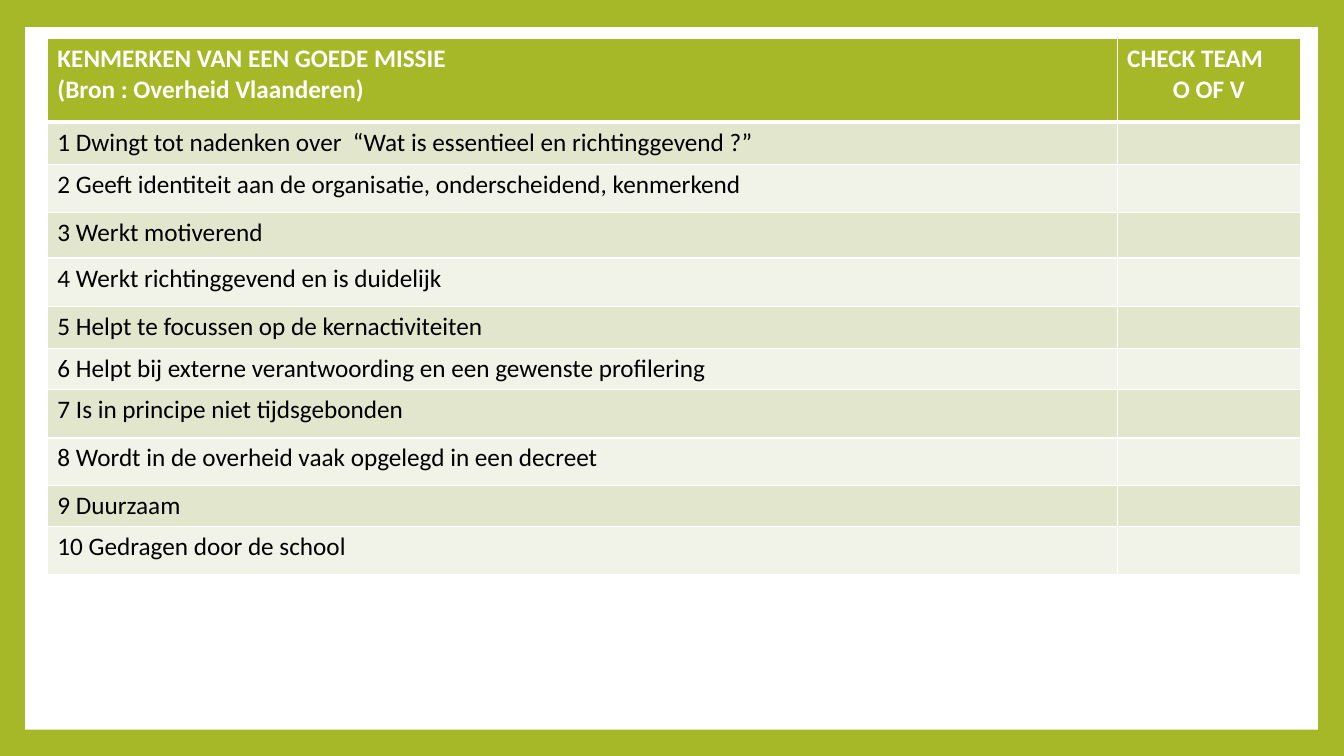
from lxml.etree import SubElement
from pptx import Presentation
from pptx.dml.color import RGBColor
from pptx.enum.shapes import MSO_SHAPE
from pptx.enum.text import PP_ALIGN
from pptx.oxml.ns import qn
from pptx.util import Inches, Pt

GREEN, WHITE, BLACK = "A6B727", "FFFFFF", "000000"
BANDS = ("E1E6CD", "F1F3E8")
WIDTHS = (10.61, 1.82)
HEIGHTS = (0.83, 0.42, 0.48, 0.45, 0.48, 0.42, 0.39, 0.48, 0.47, 0.36, 0.48)
TRAITS = (
    "Dwingt tot nadenken over  “Wat is essentieel en richtinggevend ?”",
    "Geeft identiteit aan de organisatie, onderscheidend, kenmerkend",
    "Werkt motiverend",
    "Werkt richtinggevend en is duidelijk",
    "Helpt te focussen op de kernactiviteiten",
    "Helpt bij externe verantwoording en een gewenste profilering",
    "Is in principe niet tijdsgebonden",
    "Wordt in de overheid vaak opgelegd in een decreet",
    "Duurzaam",
    "Gedragen door de school",
)


def paint(fill, color):
    fill.solid()
    fill.fore_color.rgb = RGBColor.from_string(color)


def add_panel(slide):
    """Leave the green background visible as a frame around a white panel."""
    paint(slide.background.fill, GREEN)
    panel = slide.shapes.add_shape(
        MSO_SHAPE.RECTANGLE, Inches(0.25), Inches(0.27), Inches(12.82), Inches(6.97))
    panel.shadow.inherit = False
    paint(panel.fill, WHITE)
    panel.line.fill.background()


def add_edges(cell, top, bottom):
    props = cell._tc.get_or_add_tcPr()
    for side, width in (("L", 1), ("R", 1), ("T", top), ("B", bottom)):
        line = SubElement(props, qn("a:ln" + side), w=str(Pt(width)))
        fill = SubElement(line, qn("a:solidFill"))
        SubElement(fill, qn("a:srgbClr"), val=WHITE)


def add_text(par, text, color, bold):
    run = par.add_run()
    run.text = text
    font = run.font
    font.name, font.size, font.bold = "Calibri", Pt(18), bold
    font.color.rgb = RGBColor.from_string(color)


def fill_head(cell, first, second, align=None):
    add_edges(cell, 1, 3)
    paint(cell.fill, GREEN)
    frame = cell.text_frame
    add_text(frame.paragraphs[0], first, WHITE, True)
    par = frame.add_paragraph()
    par.alignment = align
    add_text(par, second, WHITE, True)


def add_checklist(slide):
    table = slide.shapes.add_table(
        len(HEIGHTS), len(WIDTHS), Inches(0.47), Inches(0.38),
        Inches(sum(WIDTHS)), Inches(sum(HEIGHTS))).table
    for col, width in zip(table.columns, WIDTHS):
        col.width = Inches(width)
    for row, height in zip(table.rows, HEIGHTS):
        row.height = Inches(height)
    fill_head(table.cell(0, 0), "KENMERKEN VAN EEN GOEDE MISSIE",
              "(Bron : Overheid Vlaanderen)")
    fill_head(table.cell(0, 1), "CHECK TEAM", "O OF V", PP_ALIGN.CENTER)
    for num, trait in enumerate(TRAITS, 1):
        for col in range(len(WIDTHS)):
            cell = table.cell(num, col)
            add_edges(cell, 3 if num == 1 else 1, 1)
            paint(cell.fill, BANDS[(num - 1) % 2])
        par = table.cell(num, 0).text_frame.paragraphs[0]
        add_text(par, f"{num} {trait}", BLACK, False)


def main():
    deck = Presentation()
    deck.slide_width, deck.slide_height = Inches(13.33), Inches(7.5)
    slide = deck.slides.add_slide(deck.slide_layouts[6])
    add_panel(slide)
    add_checklist(slide)
    deck.save("out.pptx")


if __name__ == "__main__":
    main()
